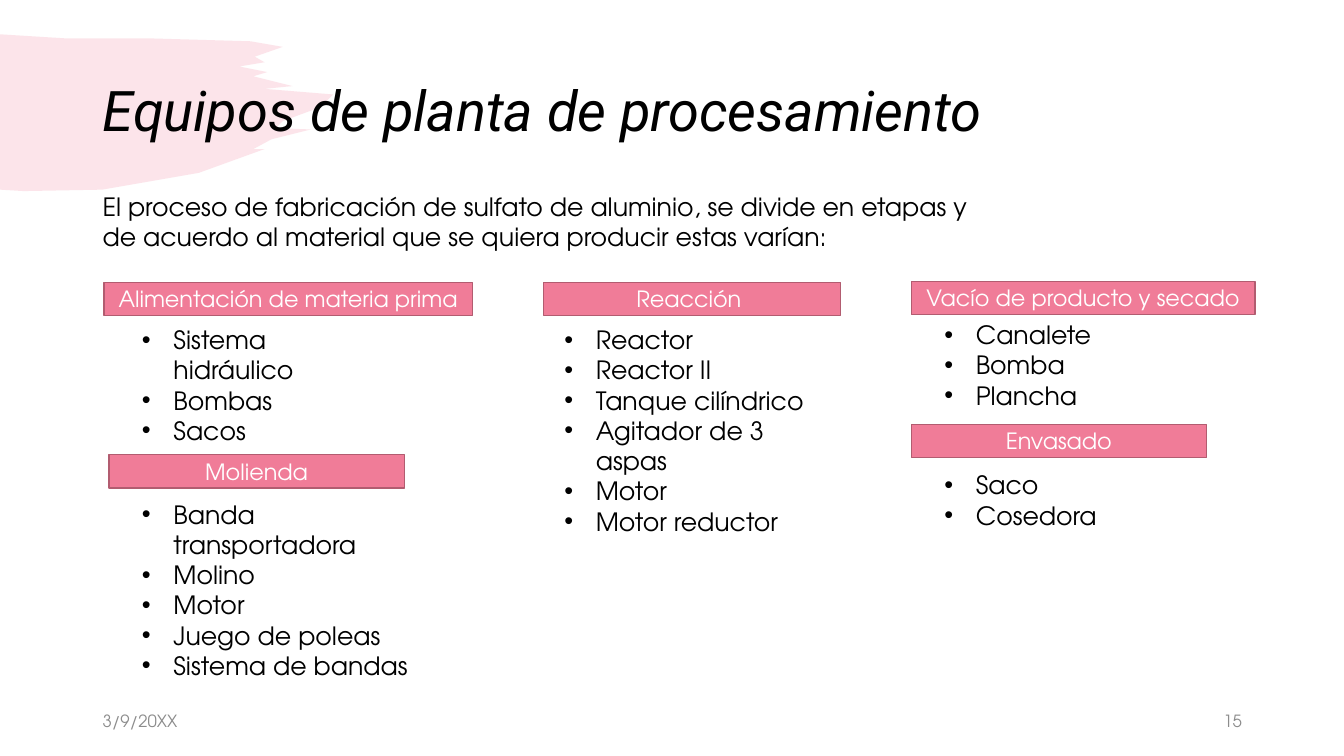
from lxml import etree
from pptx import Presentation
from pptx import util as u
from pptx.dml.color import RGBColor
from pptx.enum import shapes, text
from pptx.oxml.ns import qn

Pt = u.Pt
COLORS = {"pink": "F07C98", "border": "B25C70", "ink": "000000",
          "white": "FFFFFF", "gray": "8C8C8C"}
HEAD_FONT, BODY_FONT = "Roboto", "TeX Gyre Adventor"
INDENT = 22.5
LINE_HEIGHT = 21.7
HEADER_HEIGHT = 23.8
LONGEST_LINE = 17
ALIGN = text.PP_ALIGN

# Brush stroke outline, in points from its top left corner
BRUSH = [(0, 0), (48, 3), (109, 3), (179, 5), (202, 9), (182, 16), (189, 20),
         (171, 23), (191, 27), (181, 30), (197, 34), (209, 37), (189, 39),
         (238, 43), (229, 52), (202, 62), (197, 67), (222, 68), (194, 75),
         (181, 82), (189, 82), (142, 99), (73, 111), (17, 112), (0, 111)]

# Left edges of the lists in each column
LIST_LEFTS = [94.3, 396, 667.4]

# Column, header left, top and width, label, gap to list, list width, items
STAGES = [
    (0, 74.2, 201.6, 263.5, "Alimentación de materia prima", 2.8, 159.1,
     ["Sistema hidráulico", "Bombas", "Sacos"]),
    (1, 388.1, 201.6, 212.4, "Reacción ", 2.8, 193,
     ["Reactor", "Reactor II", "Tanque cilíndrico", "Agitador de 3 aspas",
      "Motor", "Motor reductor"]),
    (2, 650.9, 200.9, 245.5, "Vacío de producto y secado", 0, 193,
     ["Canalete", "Bomba", "Plancha"]),
    (0, 77.8, 324.7, 211, "Molienda", 4.3, 205.9,
     ["Banda transportadora", "Molino", "Motor", "Juego de poleas", "Sistema de bandas"]),
    (2, 650.9, 303.1, 211, "Envasado", 5, 159.1, ["Saco", "Cosedora"]),
]


def rgb(name):
    return RGBColor.from_string(COLORS[name])


def style(tf, size, color, font=BODY_FONT, align=ALIGN.LEFT, italic=False):
    for p in tf.paragraphs:
        p.alignment = align
        for r in p.runs:
            r.font.size, r.font.name, r.font.italic = Pt(size), font, italic
            r.font.color.rgb = rgb(color)


def add_text(s, box, content, size, color, align=ALIGN.LEFT, middle=False):
    tf = s.shapes.add_textbox(*map(Pt, box)).text_frame
    tf.word_wrap = True
    if middle:
        tf.vertical_anchor = text.MSO_ANCHOR.MIDDLE
    else:
        tf.auto_size = text.MSO_AUTO_SIZE.SHAPE_TO_FIT_TEXT
    tf.text = content
    style(tf, size, color, align=align)
    return tf


def add_brush(s, left, top):
    outline = s.shapes.build_freeform(*BRUSH[0], scale=Pt(1))
    outline.add_line_segments(BRUSH[1:], close=True)
    sp = outline.convert_to_shape(Pt(left), Pt(top))
    sp.shadow.inherit = False
    sp.fill.solid()
    sp.fill.fore_color.rgb = rgb("pink")
    sp.line.fill.background()
    color = sp.element.spPr.find(".//" + qn("a:srgbClr"))
    etree.SubElement(color, qn("a:alpha")).set("val", "20000")
    s.shapes.title.element.addprevious(sp.element)  # behind the title


def add_title(s, box):
    title = s.shapes.title
    title.left, title.top, title.width, title.height = map(Pt, box)
    tf = title.text_frame
    tf.text = "Equipos de planta de procesamiento"
    tf.auto_size = text.MSO_AUTO_SIZE.NONE
    tf.vertical_anchor = text.MSO_ANCHOR.MIDDLE
    tf.paragraphs[0].line_spacing = 0.9
    style(tf, 40, "ink", HEAD_FONT, italic=True)


def add_header(s, box, label):
    sp = s.shapes.add_shape(shapes.MSO_SHAPE.RECTANGLE, *map(Pt, box))
    sp.shadow.inherit = False
    sp.fill.solid()
    sp.fill.fore_color.rgb = rgb("pink")
    sp.line.color.rgb = rgb("border")
    sp.line.width = Pt(1)
    tf = sp.text_frame
    tf.vertical_anchor = text.MSO_ANCHOR.MIDDLE
    tf.text = label
    style(tf, 16, "white", align=ALIGN.CENTER)


def add_list(s, box, items):
    tf = add_text(s, box, "\n".join(items), 18, "ink")
    for p in tf.paragraphs:
        pPr = p._p.get_or_add_pPr()
        pPr.set("marL", str(Pt(INDENT)))
        pPr.set("indent", str(-Pt(INDENT)))
        etree.SubElement(pPr, qn("a:buFont")).set("typeface", "Arial")
        etree.SubElement(pPr, qn("a:buChar")).set("char", "•")


def add_stage(s, column, left, top, width, label, gap, list_width, items):
    add_header(s, (left, top, width, HEADER_HEIGHT), label)
    lines = len(items) + sum(len(item) > LONGEST_LINE for item in items)
    add_list(s, (LIST_LEFTS[column], top + HEADER_HEIGHT + gap, list_width,
                 7.2 + LINE_HEIGHT * lines), items)


def add_footer(s, box):
    left, top, width, height = box
    part = 216
    add_text(s, (left, top, part, height), "3/9/20XX", 12, "gray", middle=True)
    add_text(s, (left + width - part, top, part, height), "15", 12, "gray",
             ALIGN.RIGHT, middle=True)


def main():
    prs = Presentation()
    prs.slide_width, prs.slide_height = Pt(960), Pt(540)
    s = prs.slides.add_slide(prs.slide_layouts[5])
    add_title(s, (66.2, 28.8, 828, 104.4))
    add_brush(s, 0, 24.5)
    add_text(s, (66.2, 133.2, 637.9, 51.8),
             "El proceso de fabricación de sulfato de aluminio, se divide en etapas y "
             "de acuerdo al material que se quiera producir estas varían:", 18, "ink")
    for stage in STAGES:
        add_stage(s, *stage)
    add_footer(s, (66.2, 500.4, 828, 28.8))
    prs.save("out.pptx")


if __name__ == "__main__":
    main()
